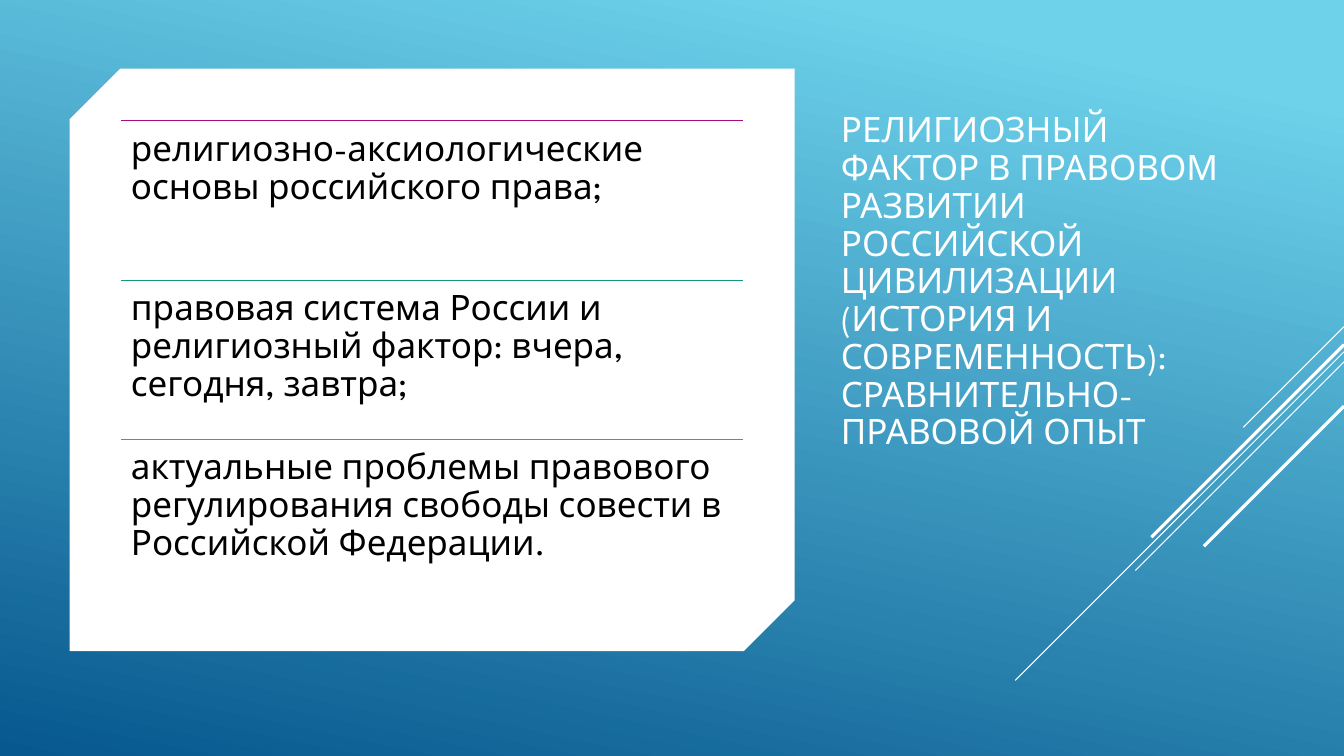
from dataclasses import dataclass

from pptx import Presentation
from pptx.dml.color import RGBColor
from pptx.enum.shapes import MSO_CONNECTOR, MSO_SHAPE
from pptx.enum.text import MSO_ANCHOR, MSO_AUTO_SIZE, PP_ALIGN
from pptx.oxml.ns import qn
from pptx.slide import Slide
from pptx.text.text import TextFrame
from pptx.util import Inches, Pt
from lxml.etree import SubElement


@dataclass(frozen=True)
class Theme:
    font: str = "League Spartan"
    text_size: float = 25
    line_spacing: float = 0.9
    thin: float = 0.75
    thick: float = 2.25
    sky: str = "6ED2EB"
    deep: str = "06588E"
    light: str = "FFFFFF"
    dark: str = "000000"
    magenta: str = "A50E82"
    teal: str = "14967C"
    green: str = "6A9E1F"


@dataclass(frozen=True)
class Ray:
    start_y: float
    reach: float
    weight: float


@dataclass(frozen=True)
class Topic:
    wording: str
    color: str


THEME = Theme()
SLIDE_W, SLIDE_H = 13.33, 7.5
TOPIC_X, TOPIC_Y, TOPIC_W, TOPIC_H = 1.2, 1.2, 6.17, 1.58

HEADING = (
    "РЕЛИГИОЗНЫЙ ФАКТОР В ПРАВОВОМ РАЗВИТИИ РОССИЙСКОЙ ЦИВИЛИЗАЦИИ "
    "(ИСТОРИЯ И СОВРЕМЕННОСТЬ): СРАВНИТЕЛЬНО-ПРАВОВОЙ ОПЫТ"
)
TOPICS = (
    Topic("религиозно-аксиологические основы российского права;", THEME.magenta),
    Topic("правовая система России и религиозный фактор: вчера, сегодня, завтра;", THEME.teal),
    Topic("актуальные проблемы правового регулирования свободы совести в Российской Федерации.", THEME.green),
)
RAYS = (
    Ray(3.24, 1.0, THEME.thin),
    Ray(3.49, 3.26, THEME.thin),
    Ray(3.59, 2.07, THEME.thin),
    Ray(3.42, 1.91, THEME.thick),
    Ray(4.03, 1.39, THEME.thick),
)


def rgb(color: str) -> RGBColor:
    return RGBColor.from_string(color)


def write(frame: TextFrame, wording: str, color: str, anchor: MSO_ANCHOR) -> None:
    frame.word_wrap = True
    frame.auto_size = MSO_AUTO_SIZE.NONE
    frame.vertical_anchor = anchor
    frame.margin_left = frame.margin_right = Inches(0.1)
    frame.margin_top = frame.margin_bottom = Inches(0.05 if anchor == MSO_ANCHOR.BOTTOM else 0.1)
    paragraph = frame.paragraphs[0]
    paragraph.alignment = PP_ALIGN.LEFT
    paragraph.line_spacing = THEME.line_spacing
    run = paragraph.add_run()
    run.text = wording
    run.font.name = THEME.font
    run.font.size = Pt(THEME.text_size)
    run.font.color.rgb = rgb(color)


def draw_line(slide: Slide, x1: float, y1: float, x2: float, y2: float, color: str, weight: float) -> None:
    line = slide.shapes.add_connector(
        MSO_CONNECTOR.STRAIGHT, Inches(x1), Inches(y1), Inches(x2), Inches(y2)
    )
    line.line.color.rgb = rgb(color)
    line.line.width = Pt(weight)
    SubElement(line._element.spPr, qn("a:effectLst"))


def draw_backdrop(slide: Slide) -> None:
    backdrop = slide.shapes.add_shape(MSO_SHAPE.RECTANGLE, 0, 0, Inches(SLIDE_W), Inches(SLIDE_H))
    backdrop.shadow.inherit = False
    backdrop.line.fill.background()
    backdrop.fill.gradient()
    backdrop.fill.gradient_angle = 258
    stops = ((0.1, THEME.sky), (1.0, THEME.deep))
    for stop, (position, color) in zip(backdrop.fill.gradient_stops, stops):
        stop.position = position
        stop.color.rgb = rgb(color)
    slide.shapes._spTree.insert(2, backdrop._element)


def draw_heading(slide: Slide) -> None:
    heading = slide.shapes.title
    heading.left, heading.top = Inches(8.24), Inches(0.68)
    heading.width, heading.height = Inches(4), Inches(3.86)
    write(heading.text_frame, HEADING, THEME.light, MSO_ANCHOR.BOTTOM)


def draw_panel(slide: Slide) -> None:
    panel = slide.shapes.add_shape(
        MSO_SHAPE.SNIP_2_DIAG_RECTANGLE, Inches(0.69), Inches(0.68), Inches(7.19), Inches(5.78)
    )
    panel.adjustments[0] = 0.087
    panel.adjustments[1] = 0
    panel.shadow.inherit = False
    panel.fill.solid()
    panel.fill.fore_color.rgb = rgb(THEME.light)
    panel.line.fill.background()


def draw_topic(slide: Slide, topic: Topic, top: float) -> None:
    draw_line(slide, TOPIC_X, top, TOPIC_X + TOPIC_W, top, topic.color, THEME.thin)
    entry = slide.shapes.add_textbox(Inches(TOPIC_X), Inches(top), Inches(TOPIC_W), Inches(TOPIC_H))
    write(entry.text_frame, topic.wording, THEME.dark, MSO_ANCHOR.TOP)


def main() -> None:
    deck = Presentation()
    deck.slide_width, deck.slide_height = Inches(SLIDE_W), Inches(SLIDE_H)
    slide = deck.slides.add_slide(deck.slide_layouts[5])
    draw_backdrop(slide)
    draw_heading(slide)
    draw_panel(slide)
    for ray in RAYS:
        draw_line(
            slide, SLIDE_W, ray.start_y, SLIDE_W - ray.reach, ray.start_y + ray.reach, THEME.light, ray.weight
        )
    for row, topic in enumerate(TOPICS):
        draw_topic(slide, topic, TOPIC_Y + row * TOPIC_H)
    deck.save("out.pptx")


if __name__ == "__main__":
    main()
